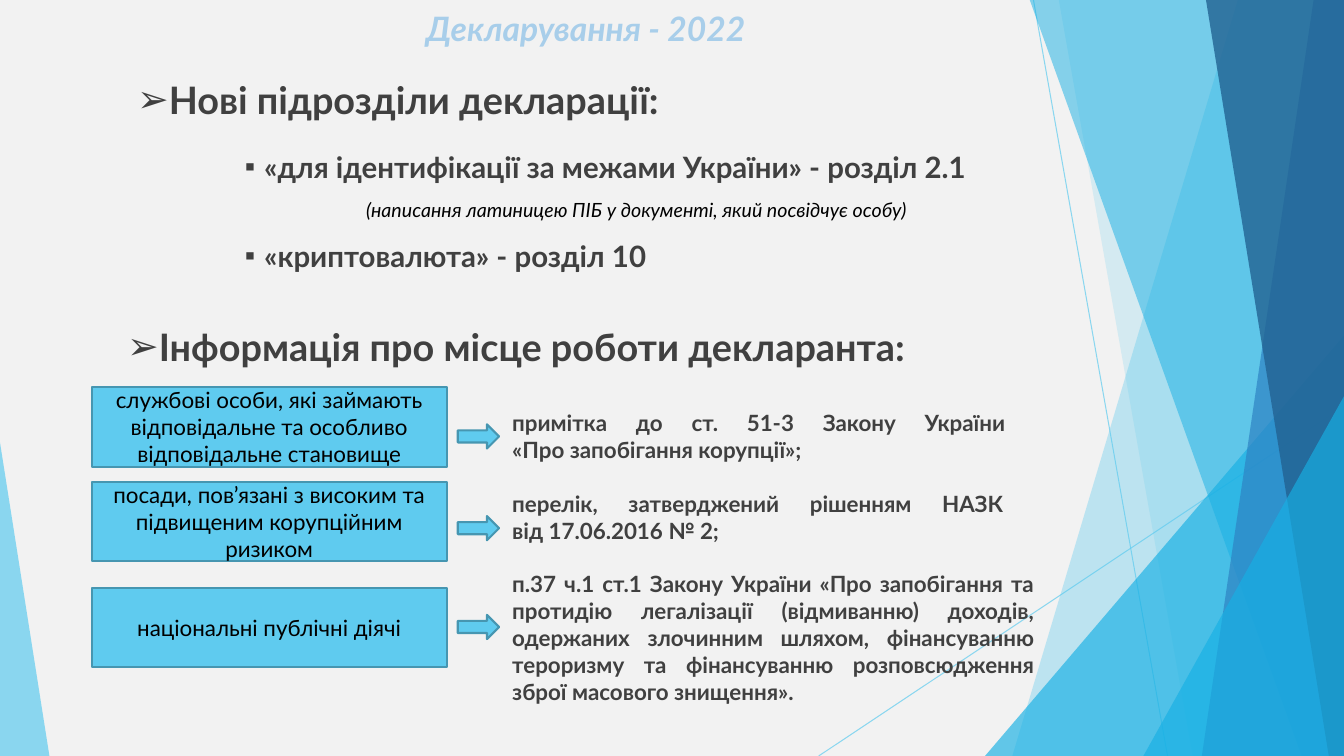
"""Build the slide on the new declaration subsections and the declarant's place of work."""
from dataclasses import dataclass

from lxml.etree import SubElement
from pptx import Presentation
from pptx.dml.color import RGBColor
from pptx.enum.shapes import MSO_CONNECTOR, MSO_SHAPE as Preset
from pptx.enum.text import MSO_ANCHOR as Anchor, MSO_AUTO_SIZE as AutoSize, PP_ALIGN as Align
from pptx.oxml.ns import qn
from pptx.util import Inches, Pt

WIDTH, HEIGHT, TOP = 13.33, 7.5, -0.01


@dataclass(frozen=True)
class Theme:
    font: str = "Lato"
    background: str = "F2F2F2"
    sky: str = "5FCBEF"
    azure: str = "17B0E4"
    blue: str = "2E83C3"
    navy: str = "226292"
    edge: str = "4696B1"
    title: str = "A8CEEA"
    text: str = "404040"
    black: str = "000000"
    title_size: int = 24
    heading_size: int = 27
    item_size: int = 21
    note_size: int = 14
    small_size: int = 16


THEME = Theme()


@dataclass(frozen=True)
class Ray:
    start: tuple[float, float]
    end: tuple[float, float]


@dataclass(frozen=True)
class Band:
    top_x: float
    bottom_x: float
    color: str
    opacity: int


@dataclass(frozen=True)
class Wedge:
    left: float
    top: float
    width: float
    apex: int
    color: str
    opacity: int


@dataclass(frozen=True)
class Line:
    text: str
    size: int
    margin: float
    indent: float = 0
    before: float = 0
    bullet: str = ""
    align: Align = Align.JUSTIFY
    color: str = THEME.text
    bold: bool = True
    italic: bool = False


@dataclass(frozen=True)
class Category:
    text: str
    top: float
    arrow_top: float


RAYS = [Ray((10.25, 0), (11.58, HEIGHT)), Ray((WIDTH, 4.03), (8.12, HEIGHT))]
FACETS = [
    Band(12.28, 10.04, THEME.sky, 36),
    Band(10.5, 11.83, THEME.sky, 20),
    Wedge(9.77, 3.33, 3.56, 1, THEME.azure, 66),
    Band(10.21, 12.91, THEME.azure, 50),
    Band(13.03, 11.92, THEME.blue, 70),
    Band(11.96, 13.18, THEME.navy, 80),
    Wedge(11.34, 3.93, 1.99, 1, THEME.azure, 66),
    Wedge(0, 4.39, 0.49, 0, THEME.sky, 70),
]
LINES = [
    Line("Нові підрозділи декларації:", THEME.heading_size, 0.38, 0.12, 0, "➢", Align.LEFT),
    Line("«для ідентифікації за межами України» - розділ 2.1", THEME.item_size, 1.76, -0.19, 19.2, "▪"),
    Line("(написання латиницею ПІБ у документі, який посвідчує особу)", THEME.note_size, 2.77,
         before=9.6, color=THEME.black, bold=False, italic=True),
    Line("«криптовалюта» - розділ 10", THEME.item_size, 1.76, -0.19, 12, "▪"),
    Line("Інформація про місце роботи декларанта:", THEME.heading_size, 0.69, -0.29, 36, "➢", Align.LEFT),
    Line("примітка до ст. 51-3 Закону України \n«Про запобігання корупції»;", THEME.small_size, 4.22, before=28.8),
    Line("перелік, затверджений рішенням НАЗК \nвід 17.06.2016 № 2;", THEME.small_size, 4.22, before=19.2),
    Line("п.37 ч.1 ст.1 Закону України «Про запобігання та протидію легалізації (відмиванню) доходів, "
         "одержаних злочинним шляхом, фінансуванню тероризму та фінансуванню розповсюдження зброї "
         "масового знищення».", THEME.small_size, 4.22, before=19.2),
]
CATEGORIES = [
    Category("службові особи, які займають відповідальне та особливо відповідальне становище", 3.84, 4.21),
    Category("посади, пов’язані з високим та підвищеним корупційним ризиком", 4.78, 5.12),
    Category("національні публічні діячі", 5.83, 6.1),
]


def rgb(color: str) -> RGBColor:
    return RGBColor.from_string(color)


def place(shape, left: float, top: float, width: float, height: float) -> None:
    shape.left, shape.top, shape.width, shape.height = map(Inches, (left, top, width, height))


def set_opacity(shape, percent: int) -> None:
    for color in list(shape.element.spPr.iter(qn("a:srgbClr"))):
        SubElement(color, qn("a:alpha"), val=str(percent * 1000))


def add_run(paragraph, text: str, size: int, color: str, bold: bool = False, italic: bool = False) -> None:
    run = paragraph.add_run()
    run.text = text
    font = run.font
    font.name, font.size, font.bold, font.italic = THEME.font, Pt(size), bold, italic
    font.color.rgb = rgb(color)


def add_ray(slide, ray: Ray):
    connector = slide.shapes.add_connector(MSO_CONNECTOR.STRAIGHT, *map(Inches, ray.start + ray.end))
    connector.line.color.rgb = rgb(THEME.sky)
    connector.line.width = Pt(0.75)
    set_opacity(connector, 70)
    SubElement(connector.element.spPr, qn("a:effectLst"))
    return connector


def add_facet(slide, facet: Band | Wedge):
    if isinstance(facet, Band):
        builder = slide.shapes.build_freeform(Inches(facet.top_x), Inches(TOP))
        corners = [(WIDTH, TOP), (WIDTH, HEIGHT), (facet.bottom_x, HEIGHT)]
        builder.add_line_segments([(Inches(x), Inches(y)) for x, y in corners])
        shape = builder.convert_to_shape()
    else:
        box = (facet.left, facet.top, facet.width, HEIGHT - facet.top)
        shape = slide.shapes.add_shape(Preset.ISOSCELES_TRIANGLE, *map(Inches, box))
        shape.adjustments[0] = facet.apex
    shape.shadow.inherit = False
    shape.fill.solid()
    shape.fill.fore_color.rgb = rgb(facet.color)
    shape.line.fill.background()
    set_opacity(shape, facet.opacity)
    return shape


def fill_title(title) -> None:
    place(title, 2.2, 0.03, 7.22, 0.29)
    frame = title.text_frame
    frame.auto_size, frame.vertical_anchor = AutoSize.NONE, Anchor.TOP
    paragraph = frame.paragraphs[0]
    paragraph.alignment = Align.CENTER
    add_run(paragraph, "Декларування - 2022", THEME.title_size, THEME.title, True, True)


def fill_body(body) -> None:
    place(body, 0.79, 0.72, 9.54, 6.37)
    frame = body.text_frame
    frame.auto_size, frame.vertical_anchor, frame.word_wrap = AutoSize.NONE, Anchor.TOP, True
    frame.margin_left = frame.margin_right = Inches(0.07)
    frame.margin_top = frame.margin_bottom = Inches(0.04)
    for index, line in enumerate(LINES):
        paragraph = frame.add_paragraph() if index else frame.paragraphs[0]
        paragraph.alignment = line.align
        paragraph.space_before, paragraph.space_after = Pt(line.before), Pt(0)
        properties = paragraph._p.get_or_add_pPr()
        properties.set("marL", str(Inches(line.margin)))
        properties.set("indent", str(Inches(line.indent)))
        if line.bullet:
            SubElement(properties, qn("a:buChar"), char=line.bullet)
        else:
            SubElement(properties, qn("a:buNone"))
        for row, text in enumerate(line.text.split("\n")):
            if row:
                paragraph.add_line_break()
            add_run(paragraph, text, line.size, line.color, line.bold, line.italic)


def add_panel(slide, preset: Preset, left: float, top: float, width: float, height: float):
    shape = slide.shapes.add_shape(preset, *map(Inches, (left, top, width, height)))
    shape.shadow.inherit = False
    shape.fill.solid()
    shape.fill.fore_color.rgb = rgb(THEME.sky)
    shape.line.color.rgb = rgb(THEME.edge)
    shape.line.width = Pt(1.5)
    return shape


def add_category(slide, category: Category) -> None:
    frame = add_panel(slide, Preset.RECTANGLE, 0.91, category.top, 3.52, 0.79).text_frame
    frame.word_wrap, frame.vertical_anchor = True, Anchor.MIDDLE
    frame.paragraphs[0].alignment = Align.CENTER
    add_run(frame.paragraphs[0], category.text, THEME.small_size, THEME.black)
    add_panel(slide, Preset.RIGHT_ARROW, 4.54, category.arrow_top, 0.41, 0.24)


def main() -> None:
    presentation = Presentation()
    presentation.slide_width, presentation.slide_height = Inches(WIDTH), Inches(HEIGHT)
    slide = presentation.slides.add_slide(presentation.slide_layouts[1])
    slide.background.fill.solid()
    slide.background.fill.fore_color.rgb = rgb(THEME.background)
    title, body = slide.placeholders
    backdrop = [add_ray(slide, ray) for ray in RAYS] + [add_facet(slide, facet) for facet in FACETS]
    for shape in backdrop:
        title.element.addprevious(shape.element)
    fill_title(title)
    fill_body(body)
    for category in CATEGORIES:
        add_category(slide, category)
    presentation.save("out.pptx")


if __name__ == "__main__":
    main()
